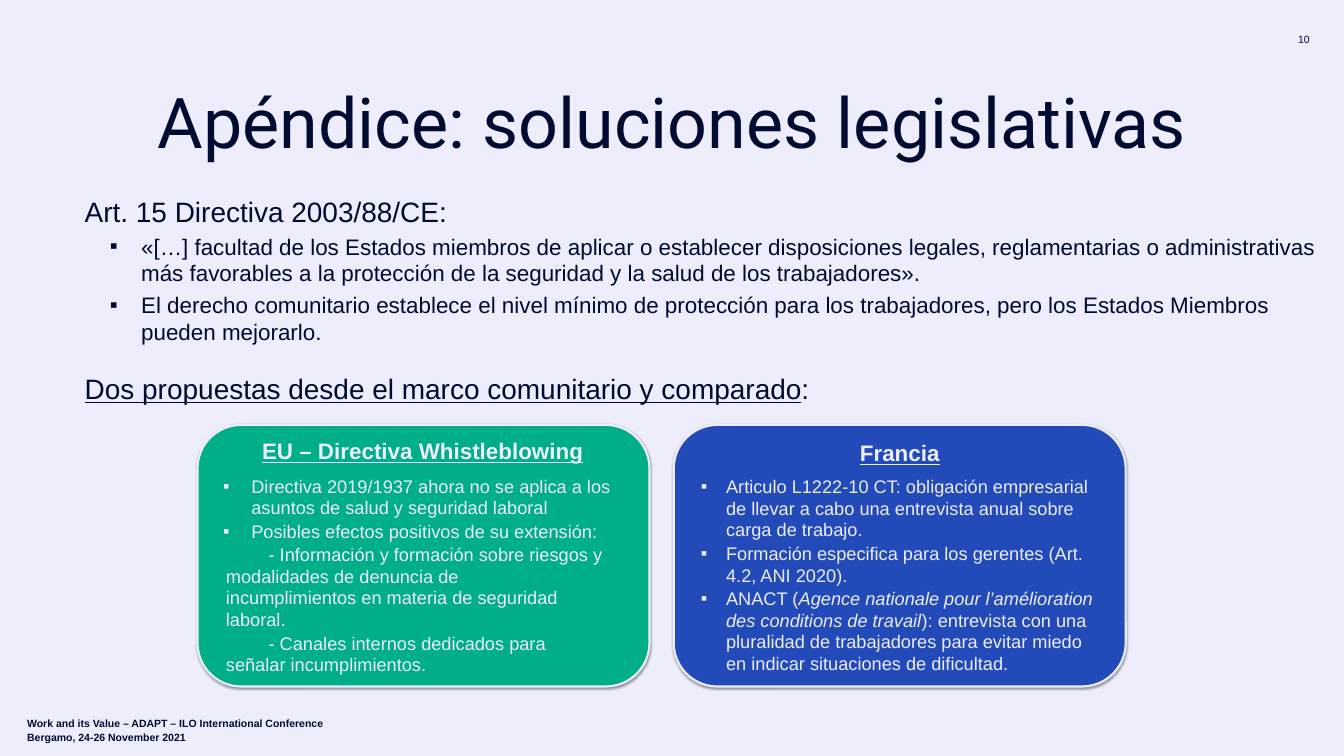
from dataclasses import dataclass

from lxml.etree import SubElement
from pptx import Presentation
from pptx.dml.color import RGBColor
from pptx.enum.shapes import MSO_SHAPE
from pptx.enum.text import MSO_ANCHOR, MSO_AUTO_SIZE, PP_ALIGN
from pptx.oxml.ns import qn
from pptx.util import Pt


@dataclass(frozen=True)
class Theme:
    ink: RGBColor = RGBColor.from_string("000B32")
    paper: RGBColor = RGBColor.from_string("EDEDFB")
    green: RGBColor = RGBColor.from_string("00AE88")
    blue: RGBColor = RGBColor.from_string("224BB9")
    title_font: str = "Roboto"
    body_font: str = "Arial"
    title_size: int = 100
    lead_size: int = 40
    heading_size: int = 32
    panel_size: int = 26
    small_size: int = 15
    line_spacing: float = 1.0


THEME = Theme()


@dataclass(frozen=True)
class Box:
    left: float
    top: float
    width: float
    height: float

    def inner(self, left, top, width, height):
        return Box(self.left + left, self.top + top, width, height)

    def lengths(self):
        return Pt(self.left), Pt(self.top), Pt(self.width), Pt(self.height)


def place(shape, box):
    shape.left, shape.top, shape.width, shape.height = box.lengths()


def prepare_frame(shape, anchor=MSO_ANCHOR.TOP):
    frame = shape.text_frame
    frame.word_wrap = True
    frame.auto_size = MSO_AUTO_SIZE.NONE
    frame.vertical_anchor = anchor
    return frame


def add_text_box(slide, box):
    return prepare_frame(slide.shapes.add_textbox(*box.lengths()))


def add_run(paragraph, text, size, color, font=THEME.body_font, bold=False, italic=False, underline=False):
    run = paragraph.add_run()
    run.text = text
    run.font.name = font
    run.font.size = Pt(size)
    run.font.color.rgb = color
    run.font.bold = bold
    run.font.italic = italic
    run.font.underline = underline


def add_paragraph(frame, before=0, margin=0, indent=0, bullet=None, align=PP_ALIGN.LEFT):
    first = frame.paragraphs[0]
    paragraph = first if not first.runs else frame.add_paragraph()
    paragraph.alignment = align
    paragraph.line_spacing = THEME.line_spacing
    paragraph.space_before = Pt(before)
    properties = paragraph._p.get_or_add_pPr()
    properties.set("marL", str(Pt(margin)))
    properties.set("indent", str(Pt(indent)))
    if bullet:
        SubElement(properties, qn("a:buFont"), typeface=THEME.body_font)
        SubElement(properties, qn("a:buChar"), char=bullet)
    else:
        SubElement(properties, qn("a:buNone"))
    return paragraph


def fill_title(slide, box):
    title = slide.shapes.title
    place(title, box)
    frame = prepare_frame(title, MSO_ANCHOR.MIDDLE)
    paragraph = add_paragraph(frame, align=PP_ALIGN.CENTER)
    paragraph.line_spacing = 0.8
    add_run(paragraph, "Apéndice: soluciones legislativas", THEME.title_size, THEME.ink, THEME.title_font)


def fill_body(slide, box):
    body = slide.placeholders[1]
    place(body, box)
    frame = prepare_frame(body)
    add_run(add_paragraph(frame), "Art. 15 Directiva 2003/88/CE:", THEME.lead_size, THEME.ink)
    for text in (
        "«[…] facultad de los Estados miembros de aplicar o establecer disposiciones legales, "
        "reglamentarias o administrativas más favorables a la protección de la seguridad y la "
        "salud de los trabajadores».",
        "El derecho comunitario establece el nivel mínimo de protección para los trabajadores, "
        "pero los Estados Miembros pueden mejorarlo.",
    ):
        paragraph = add_paragraph(frame, 6.4, 80.6, -44.6, "▪")
        add_run(paragraph, text, THEME.heading_size, THEME.ink)
    paragraph = add_paragraph(frame, 38)
    add_run(paragraph, "Dos propuestas desde el marco comunitario y comparado",
            THEME.lead_size, THEME.ink, underline=True)
    add_run(paragraph, ":", THEME.lead_size, THEME.ink)


def add_panel(slide, box, color, text_box, heading):
    shape = slide.shapes.add_shape(MSO_SHAPE.ROUNDED_RECTANGLE, *box.lengths())
    shape.shadow.inherit = False
    shape.fill.solid()
    shape.fill.fore_color.rgb = color
    shape.line.color.rgb = THEME.paper
    shape.line.width = Pt(3)
    effects = shape._element.spPr.find(qn("a:effectLst"))
    shadow = SubElement(effects, qn("a:outerShdw"), blurRad=str(Pt(3.1)), dist=str(Pt(1.6)),
                        dir="5400000", rotWithShape="0")
    shadow_color = SubElement(shadow, qn("a:srgbClr"), val="000000")
    SubElement(shadow_color, qn("a:alpha"), val="38000")
    frame = add_text_box(slide, text_box)
    paragraph = add_paragraph(frame, align=PP_ALIGN.CENTER)
    add_run(paragraph, heading, THEME.heading_size, THEME.paper, bold=True, underline=True)
    return frame


def add_panel_bullet(frame, parts, margin, before):
    paragraph = add_paragraph(frame, before, margin, -margin, "▪")
    for text, italic in parts:
        add_run(paragraph, text, THEME.panel_size, THEME.paper, italic=italic)


def add_directive_panel(slide, box):
    frame = add_panel(slide, box, THEME.green, box.inner(29.5, 14.4, 584.6, 349),
                      "EU – Directiva Whistleblowing")
    bullets = (
        "Directiva 2019/1937 ahora no se aplica a los asuntos de salud y seguridad laboral",
        "Posibles efectos positivos de su extensión:",
    )
    for text, before in zip(bullets, (15, 2)):
        add_panel_bullet(frame, [(text, False)], 40.3, before)
    for lines in (
        ("- Información y formación sobre riesgos y", "modalidades de denuncia de",
         "incumplimientos en materia de seguridad", "laboral."),
        ("- Canales internos dedicados para", "señalar incumplimientos."),
    ):
        paragraph = add_paragraph(frame, 2, 4, 61)
        for number, line in enumerate(lines):
            if number:
                paragraph.add_line_break()
            add_run(paragraph, line, THEME.panel_size, THEME.paper)


def add_france_panel(slide, box):
    frame = add_panel(slide, box, THEME.blue, box.inner(31.7, 17.3, 582.5, 346), "Francia")
    bullets = (
        [("Articulo L1222-10 CT: obligación empresarial de llevar a cabo una entrevista anual "
          "sobre carga de trabajo.", False)],
        [("Formación especifica para los gerentes (Art. 4.2, ANI 2020).", False)],
        [("ANACT (", False),
         ("Agence nationale pour l’amélioration des conditions de travail", True),
         ("): entrevista con una pluralidad de trabajadores para evitar miedo en indicar "
          "situaciones de dificultad.", False)],
    )
    for parts, before in zip(bullets, (12.5, 2, 2)):
        add_panel_bullet(frame, parts, 36, before)


def add_footer(slide, box):
    frame = add_text_box(slide, box)
    lines = ("Work and its Value – ADAPT – ILO International Conference", "Bergamo, 24-26 November 2021")
    for line, before in zip(lines, (0, 3)):
        add_run(add_paragraph(frame, before), line, THEME.small_size, THEME.ink, bold=True)


def add_page_number(slide, box):
    frame = add_text_box(slide, box)
    frame.word_wrap = False
    frame.margin_left = frame.margin_right = frame.margin_top = frame.margin_bottom = Pt(5.76)
    add_run(add_paragraph(frame, align=PP_ALIGN.CENTER), "10", THEME.small_size, THEME.ink)


def main():
    presentation = Presentation()
    presentation.slide_width, presentation.slide_height = Pt(1920.24), Pt(1080)
    slide = presentation.slides.add_slide(presentation.slide_layouts[1])
    slide.background.fill.solid()
    slide.background.fill.fore_color.rgb = THEME.paper
    add_page_number(slide, Box(1848.2, 41, 29.5, 29.5))
    fill_title(slide, Box(77.8, 130, 1764, 107.3))
    fill_body(slide, Box(113.8, 274.3, 1784.9, 320))
    left_panel = Box(282.2, 607, 645.8, 373.7)
    add_directive_panel(slide, left_panel)
    add_france_panel(slide, left_panel.inner(680.4, 0, 645.8, 373.7))
    add_footer(slide, Box(31.7, 1020.2, 518.4, 50))
    presentation.save("out.pptx")


if __name__ == "__main__":
    main()
